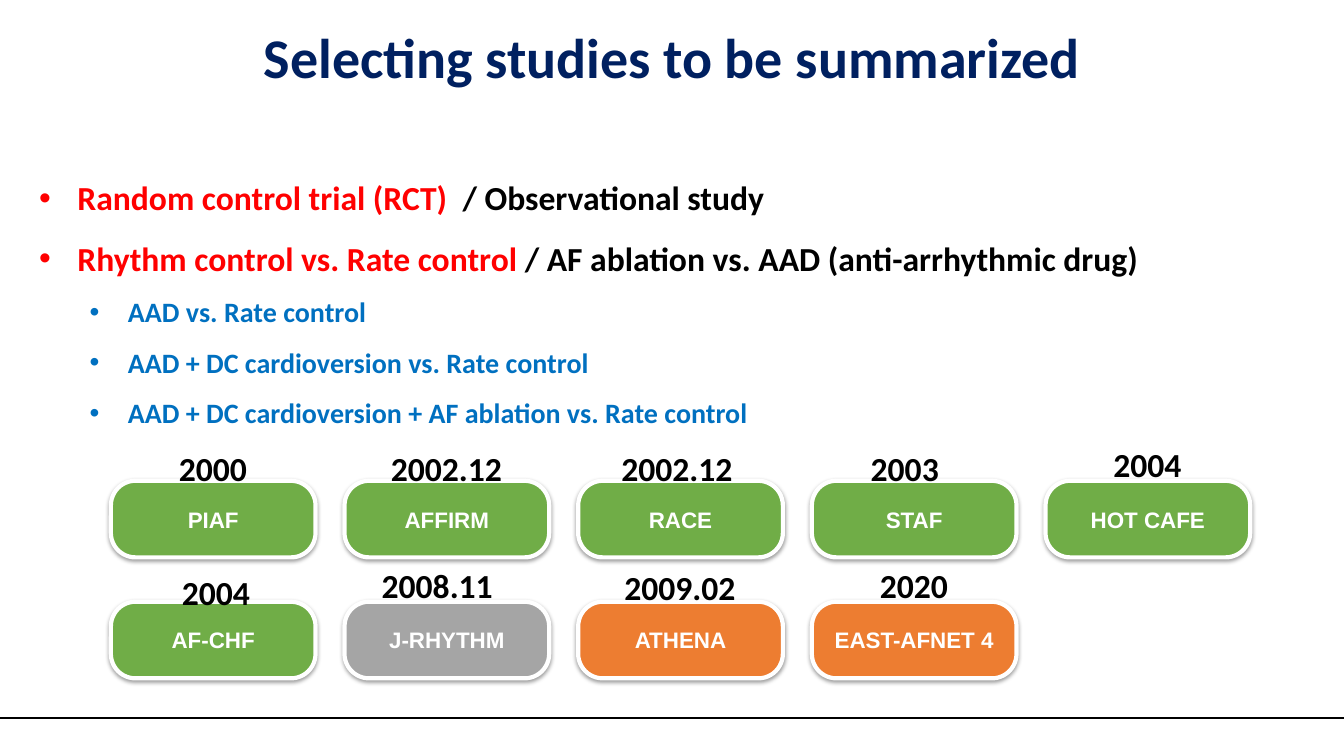
from lxml import etree
from pptx import Presentation
from pptx import util as u
from pptx.dml.color import RGBColor
from pptx.enum import shapes, text
from pptx.oxml import ns

WIDTH, HEIGHT = 13.33, 7.5
GRID_LEFT, GRID_TOP = 1.1, 4.77
COL, ROW = (10.37 - 1.1) / 4, 1.2
PILL_W, PILL_H = 2.03, 0.76
GREEN, GREY, ORANGE = "70AD47", "A5A5A5", "ED7D31"
RED, BLUE, NAVY, BLACK, WHITE = "FF0000", "0070C0", "002060", "000000", "FFFFFF"

BULLETS = [
    (0, [("Random control trial (RCT)  ", RED), ("/ Observational study", BLACK)]),
    (0, [("Rhythm control vs. Rate control", RED),
         (" / AF ablation vs. AAD (anti-arrhythmic drug)", BLACK)]),
    (1, [("AAD vs. Rate control", BLUE)]),
    (1, [("AAD + DC cardioversion vs. Rate control", BLUE)]),
    (1, [("AAD + DC cardioversion + AF ablation vs. Rate control", BLUE)]),
]

# name, colour, date, shift of the date from the pill's centre, rise above its top
TRIALS = [
    [("PIAF", GREEN, "2000", 0, 0.38),
     ("AFFIRM", GREEN, "2002.12", 0, 0.38),
     ("RACE", GREEN, "2002.12", -0.03, 0.38),
     ("STAF", GREEN, "2003", -0.09, 0.38),
     ("HOT CAFE", GREEN, "2004", 0, 0.42)],
    [("AF-CHF", GREEN, "2004", 0.03, 0.35),
     ("J-RHYTHM", GREY, "2008.11", -0.09, 0.41),
     ("ATHENA", ORANGE, "2009.02", 0, 0.39),
     ("EAST-AFNET 4", ORANGE, "2020", 0, 0.41)],
]


def rgb(value):
    return RGBColor.from_string(value)


def inches(*lengths):
    return [u.Inches(length) for length in lengths]


def child(parent, tag, **attributes):
    return etree.SubElement(parent, ns.qn(tag), attributes)


def write(p, words, size=24, color=BLACK, font="Calibri", align=None):
    r = p.add_run()
    r.text = words
    r.font.size = u.Pt(size)
    r.font.name = font
    r.font.bold = True
    r.font.color.rgb = rgb(color)
    if align is not None:
        p.alignment = align


def add_title(s, words):
    sp = s.shapes.add_textbox(*inches(0, 0, WIDTH, 1.12))
    tf = sp.text_frame
    tf.word_wrap = True
    tf.vertical_anchor = text.MSO_ANCHOR.MIDDLE
    write(tf.paragraphs[0], words, size=40, color=NAVY, align=text.PP_ALIGN.CENTER)


def add_bullets(s, items):
    tf = s.shapes.add_textbox(*inches(0.29, 1.51, 12.93, 2.78)).text_frame
    tf.word_wrap = True
    for i, (level, runs) in enumerate(items):
        p = tf.add_paragraph() if i else tf.paragraphs[0]
        p.level = level
        p.line_spacing = 1.5
        pPr = p._p.get_or_add_pPr()
        pPr.set("marL", str(u.Inches(0.38 + 0.5 * level)))
        pPr.set("indent", str(u.Inches(-0.38)))
        child(pPr, "a:buFont", typeface="Arial")
        child(pPr, "a:buChar", char="•")
        for words, color in runs:
            write(p, words, size=24 - 4 * level, color=color)


def add_pill(s, left, top, name, color):
    sp = s.shapes.add_shape(shapes.MSO_SHAPE.ROUNDED_RECTANGLE,
                            *inches(left, top, PILL_W, PILL_H))
    sp.adjustments[0] = 0.32
    sp.fill.solid()
    sp.fill.fore_color.rgb = rgb(color)
    sp.line.color.rgb = rgb(WHITE)
    sp.line.width = u.Pt(3)
    sp.shadow.inherit = False
    effects = sp._element.spPr.find(ns.qn("a:effectLst"))
    shadow = child(effects, "a:outerShdw", blurRad=str(u.Pt(3.1)), dist=str(u.Pt(1.6)),
                   dir="5400000", rotWithShape="0")
    child(child(shadow, "a:srgbClr", val=BLACK), "a:alpha", val="38000")
    tf = sp.text_frame
    tf.word_wrap = True
    tf.margin_left = tf.margin_right = 0
    tf.vertical_anchor = text.MSO_ANCHOR.MIDDLE
    write(tf.paragraphs[0], name, size=16, color=WHITE, font="Arial",
          align=text.PP_ALIGN.CENTER)


def add_date(s, center, top, date):
    width = 0.88 if len(date) == 4 else 1.31
    tf = s.shapes.add_textbox(*inches(center - width / 2, top, width, 0.5)).text_frame
    tf.word_wrap = False
    write(tf.paragraphs[0], date)


def add_footer_line(s):
    line = s.shapes.add_connector(shapes.MSO_CONNECTOR.STRAIGHT,
                                  *inches(0, 0.95 * HEIGHT, WIDTH, 0.95 * HEIGHT))
    line.line.color.rgb = rgb(BLACK)
    line.line.width = u.Pt(1.75)
    child(line._element.spPr, "a:effectLst")


def main():
    prs = Presentation()
    prs.slide_width, prs.slide_height = inches(WIDTH, HEIGHT)
    s = prs.slides.add_slide(prs.slide_layouts[6])
    add_footer_line(s)
    add_title(s, "Selecting studies to be summarized")
    add_bullets(s, BULLETS)
    for row, trials in enumerate(TRIALS):
        top = GRID_TOP + row * ROW
        for col, (name, color, date, shift, rise) in enumerate(trials):
            left = GRID_LEFT + col * COL
            add_pill(s, left, top, name, color)
            add_date(s, left + PILL_W / 2 + shift, top - rise, date)
    prs.save("out.pptx")


if __name__ == "__main__":
    main()
